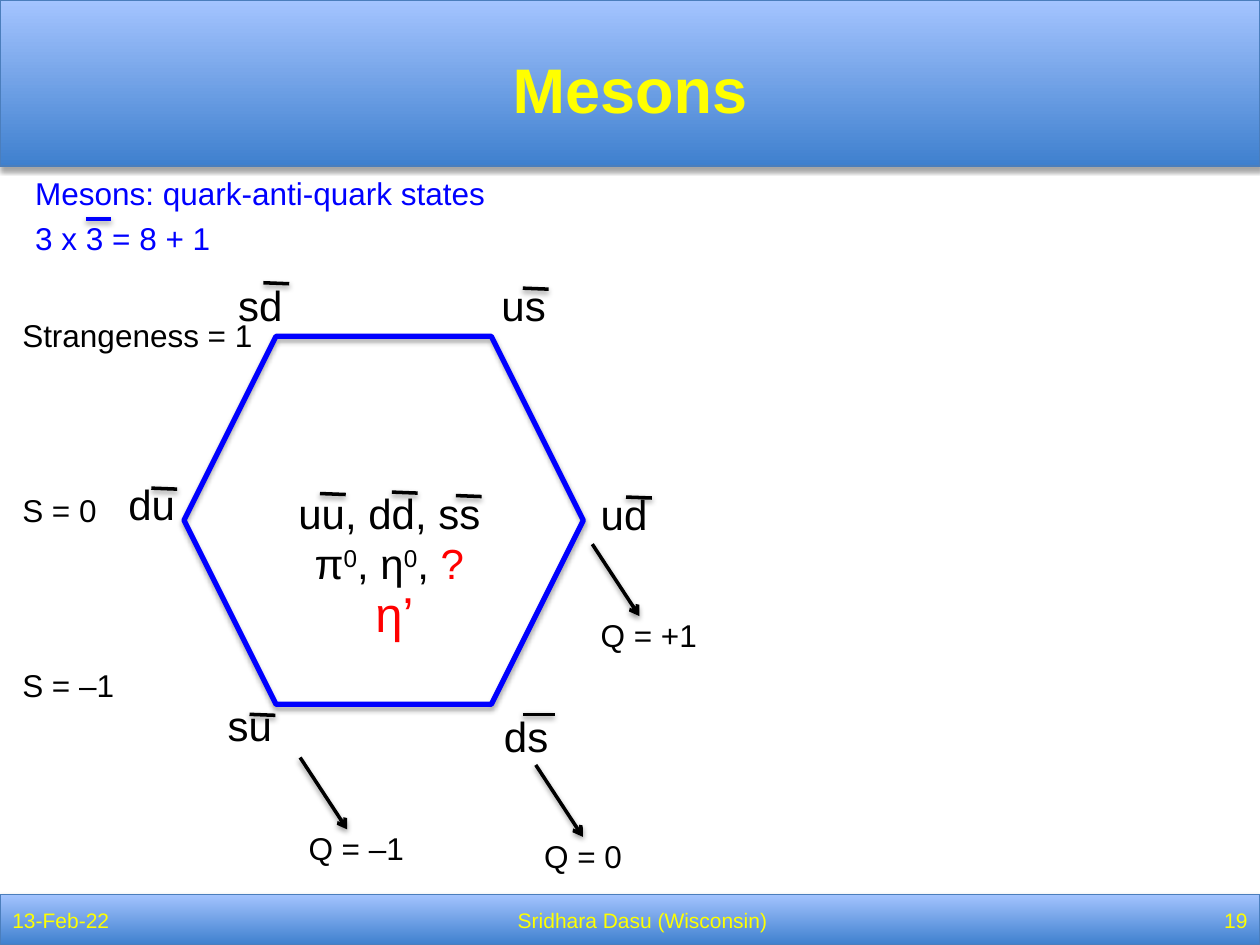
from dataclasses import dataclass

from lxml.etree import SubElement
from pptx import Presentation
from pptx.dml.color import RGBColor
from pptx.enum.shapes import MSO_CONNECTOR, MSO_SHAPE
from pptx.enum.text import MSO_ANCHOR, PP_ALIGN
from pptx.oxml.ns import qn
from pptx.util import Cm, Pt

HUES = {
    "black": "000000", "blue": "0000FF", "red": "FF0000", "yellow": "FFFF00",
    "deep": "3F80CE", "pale": "A4C4FF", "edge": "4B7EBC",
}
FONT = "Arial"
WIDE, HIGH = 25.4, 19.05
FOOT = 18.03


@dataclass
class Label:
    text: str
    x: float
    y: float
    w: float
    h: float
    size: int = 18
    hue: str = "black"
    align: PP_ALIGN = PP_ALIGN.LEFT
    anchor: MSO_ANCHOR = MSO_ANCHOR.TOP


@dataclass
class Stroke:
    x: float
    y: float
    dx: float = 0.52
    dy: float = 0.02
    hue: str = "black"
    arrow: bool = False


@dataclass
class Charge:
    text: str
    x: float
    y: float


def color(name: str) -> RGBColor:
    return RGBColor.from_string(HUES[name])


def style(font, size: int, hue: str) -> None:
    font.name, font.size = FONT, Pt(size)
    font.color.rgb = color(hue)


def shade(shape, alpha: int, dist: float) -> None:
    """Cast a soft shadow straight down; call after fill and line are set."""
    effects = SubElement(shape._element.spPr, qn("a:effectLst"))
    outer = SubElement(effects, qn("a:outerShdw"), blurRad=str(Pt(3.1)),
                       dist=str(Pt(dist)), dir="5400000", rotWithShape="0")
    tint = SubElement(outer, qn("a:srgbClr"), val=HUES["black"])
    SubElement(tint, qn("a:alpha"), val=str(alpha * 1000))


def draw_band(slide, top: float, high: float) -> None:
    band = slide.shapes.add_shape(MSO_SHAPE.RECTANGLE, 0, Cm(top), Cm(WIDE), Cm(high))
    band.fill.gradient()
    band.fill.gradient_angle = 90
    for stop, hue in zip(band.fill.gradient_stops, ("deep", "pale")):
        stop.color.rgb = color(hue)
    band.line.color.rgb = color("edge")
    band.line.width = Pt(0.75)
    shade(band, 35, 1.8)
    # Keep the band behind the title
    slide.shapes._spTree.insert(2, band._element)


def draw_label(slide, label: Label):
    box = slide.shapes.add_textbox(Cm(label.x), Cm(label.y), Cm(label.w), Cm(label.h))
    frame = box.text_frame
    frame.word_wrap = True
    frame.vertical_anchor = label.anchor
    frame.text = label.text
    for para in frame.paragraphs:
        para.alignment = label.align
        for run in para.runs:
            style(run.font, label.size, label.hue)
    return frame


def draw_stroke(slide, stroke: Stroke) -> None:
    line = slide.shapes.add_connector(
        MSO_CONNECTOR.STRAIGHT, Cm(stroke.x), Cm(stroke.y),
        Cm(stroke.x + stroke.dx), Cm(stroke.y + stroke.dy))
    line.line.color.rgb = color(stroke.hue)
    line.line.width = Pt(2)
    if stroke.arrow:
        SubElement(line.line._get_or_add_ln(), qn("a:tailEnd"), type="arrow")
    shade(line, 38, 1.6)


def draw_charge(slide, charge: Charge) -> None:
    draw_stroke(slide, Stroke(charge.x, charge.y, 0.95, 1.45, arrow=True))
    draw_label(slide, Label(charge.text, charge.x - 0.08, charge.y + 1.32, 3.02, 1.02))


def main() -> None:
    deck = Presentation()
    deck.slide_width, deck.slide_height = Cm(WIDE), Cm(HIGH)
    slide = deck.slides.add_slide(deck.slide_layouts[5])

    # Header and footer bands
    draw_band(slide, 0, 3.35)
    draw_band(slide, FOOT, HIGH - FOOT)

    # Title
    title = slide.shapes.title
    title.left, title.top, title.width, title.height = Cm(1.27), Cm(0.2), Cm(22.86), Cm(3.18)
    title.text_frame.text = "Mesons"
    title.text_frame.vertical_anchor = MSO_ANCHOR.MIDDLE
    head = title.text_frame.paragraphs[0]
    head.alignment = PP_ALIGN.CENTER
    style(head.runs[0].font, 36, "yellow")
    head.runs[0].font.bold = True

    # Footer texts
    for text, x, w, align in (
        ("13-Feb-22", 0, 3.48, PP_ALIGN.LEFT),
        ("Sridhara Dasu (Wisconsin)", 3.48, 18.95, PP_ALIGN.CENTER),
        ("19", 22.43, 2.97, PP_ALIGN.RIGHT),
    ):
        draw_label(slide, Label(text, x, FOOT, w, HIGH - FOOT, 12, "yellow",
                                align, MSO_ANCHOR.MIDDLE))

    # Strangeness rows
    for row, text in enumerate(("Strangeness = 1", "S = 0", "S = –1")):
        draw_label(slide, Label(text, 0.2, 6.25 + 3.53 * row, 5.28, 1.02))

    # Charge diagonals
    for charge in (Charge("Q = –1", 6.05, 15.27), Charge("Q = 0", 10.8, 15.42),
                   Charge("Q = +1", 11.94, 10.97)):
        draw_charge(slide, charge)

    # Octet hexagon
    hexa = slide.shapes.add_shape(MSO_SHAPE.HEXAGON, Cm(3.71), Cm(6.78), Cm(8.05), Cm(7.42))
    hexa.fill.background()
    hexa.line.color.rgb = color("blue")
    hexa.line.width = Pt(3)
    shade(hexa, 35, 1.8)

    # Quark pairs at the corners
    for text, x, y in (
        ("du", 2.34, 9.53), ("ud", 11.86, 9.73), ("us", 9.86, 5.51),
        ("sd", 4.55, 5.51), ("ds", 9.91, 14.2), ("su", 4.34, 13.97),
    ):
        draw_label(slide, Label(text, x, y, 1.47, 1.27, 24))

    # Neutral states in the centre
    core = draw_label(slide, Label("uu, dd, ss", 5.64, 9.7, 4.42, 2.31, 24,
                                   align=PP_ALIGN.CENTER))
    para = core.add_paragraph()
    para.alignment = PP_ALIGN.CENTER
    for text, hue, lift in (("π", "black", 0), ("0", "black", 30), (", η", "black", 0),
                            ("0", "black", 30), (", ", "black", 0), ("?", "red", 0)):
        run = para.add_run()
        run.text = text
        style(run.font, 24, hue)
        if lift:
            run._r.get_or_add_rPr().set("baseline", str(lift * 1000))
    draw_label(slide, Label("η’", 7.32, 11.63, 1.57, 1.46, 28, "red"))

    # Multiplet rule
    rule = draw_label(slide, Label("Mesons: quark-anti-quark states\n3 x 3 = 8 + 1",
                                   0.46, 3.66, 10.16, 1.7, 18, "blue"))
    for para in rule.paragraphs:
        para.line_spacing = 0.6
    rule.paragraphs[1].space_before = Pt(12.4)

    # Antiquark bars
    for x, y in ((5.31, 5.7), (10.54, 5.81), (3.05, 9.84), (12.62, 10.02),
                 (5.03, 14.4), (6.45, 9.95), (7.9, 9.92), (9.19, 9.99)):
        draw_stroke(slide, Stroke(x, y))
    draw_stroke(slide, Stroke(10.54, 14.4, 0.64, 0))
    draw_stroke(slide, Stroke(1.73, 4.42, 0.51, 0, "blue"))

    deck.save("out.pptx")


if __name__ == "__main__":
    main()
